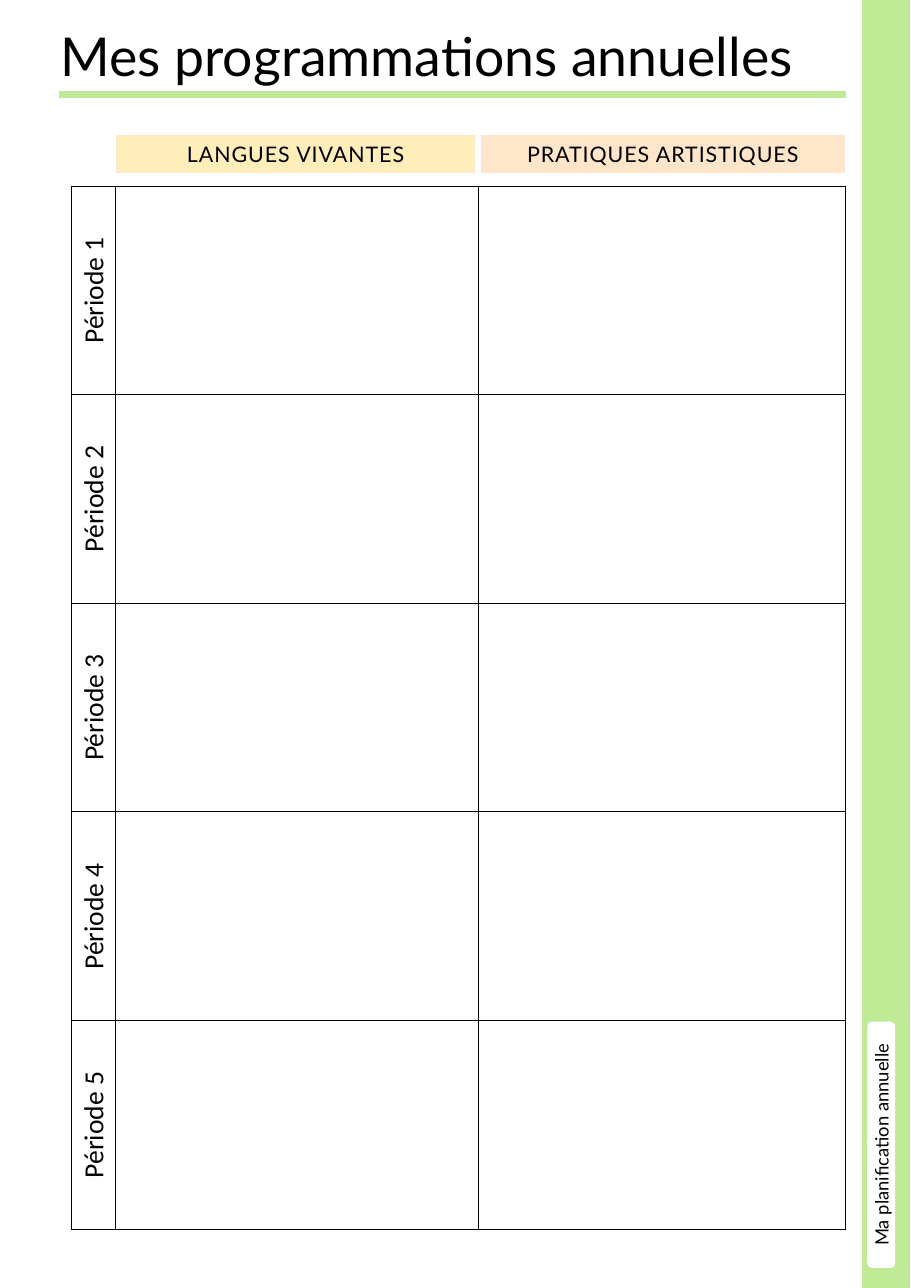
"""Build an A4 yearly planning page with one row per school period."""
from lxml.etree import SubElement
from pptx import Presentation
from pptx.dml.color import RGBColor
from pptx.enum.shapes import MSO_CONNECTOR as Connector, MSO_SHAPE as Shape
from pptx.enum.text import MSO_ANCHOR as Anchor, PP_ALIGN as Align
from pptx.oxml.ns import qn
from pptx.util import Cm, Pt

TITLE = "Mes programmations annuelles"
TAB = "Ma planification annuelle"
PERIODS = [f"Période {number}" for number in range(1, 6)]
SUBJECTS = [
    {"text": "LANGUES VIVANTES", "left": 2.69, "width": 8.26, "fill": "amber", "alpha": 27},
    {"text": "PRATIQUES ARTISTIQUES", "left": 11.1, "width": 8.38, "fill": "peach", "alpha": 100},
]
COLUMNS = [1.02, 8.36, 8.46]
ROW_HEIGHT = 4.81
PAGE_WIDTH, PAGE_HEIGHT = 21.01, 29.69
COLORS = {"green": "BFEA96", "rule": "BEE996", "amber": "FFC000",
          "peach": "FFE5C9", "white": "FFFFFF", "black": "000000"}


def color(name):
    """Return the named colour."""
    return RGBColor.from_string(COLORS[name])


def write(frame, text, size, font="Lato", align=Align.CENTER, anchor=Anchor.MIDDLE, spacing=0):
    """Put one formatted line of text in a text frame."""
    frame.word_wrap = True
    frame.vertical_anchor = anchor
    para = frame.paragraphs[0]
    para.alignment = align
    span = para.add_run()
    span.text = text
    span.font.size = Pt(size)
    span.font.name = font
    span.font.color.rgb = color("black")
    if spacing:
        span.font._element.set("spc", str(round(spacing * 100)))


def add_box(page, kind, place, fill, line, line_width, alpha=100):
    """Add a filled, outlined shape without a shadow."""
    box = page.shapes.add_shape(kind, *map(Cm, place))
    box.shadow.inherit = False
    box.fill.solid()
    box.fill.fore_color.rgb = color(fill)
    box.line.color.rgb = color(line)
    box.line.width = Pt(line_width)
    if alpha < 100:
        tint = box.element.spPr.find(qn("a:solidFill"))[0]
        SubElement(tint, qn("a:alpha"), val=str(alpha * 1000))
    return box


def add_borders(cell, width):
    """Draw all four black borders of a cell."""
    properties = cell._tc.get_or_add_tcPr()
    for side in ("lnL", "lnR", "lnT", "lnB"):
        edge = SubElement(properties, qn(f"a:{side}"), w=str(Pt(width)))
        fill = SubElement(edge, qn("a:solidFill"))
        SubElement(fill, qn("a:srgbClr"), val=COLORS["black"])


def add_title(page):
    """Place the title and the rule under it."""
    title = page.shapes.title
    title.left, title.top, title.width, title.height = map(Cm, (1.14, 0.41, 19.48, 1.75))
    write(title.text_frame, TITLE, 35, align=Align.LEFT, anchor=Anchor.TOP)
    rule = page.shapes.add_connector(Connector.STRAIGHT, *map(Cm, (1.37, 2.18, 19.51, 2.18)))
    rule.line.color.rgb = color("rule")
    rule.line.width = Pt(4.75)
    SubElement(rule.element.spPr, qn("a:effectLst"))


def add_sidebar(page):
    """Add the green side band and its vertical tab."""
    add_box(page, Shape.RECTANGLE, (19.89, 0, 1.09, PAGE_HEIGHT), "green", "green", 1)
    tab = add_box(page, Shape.ROUNDED_RECTANGLE, (20.02, 23.57, 0.61, 5.64), "white", "white", 1)
    frame = tab.text_frame
    frame.margin_left = frame.margin_right = frame.margin_top = frame.margin_bottom = 0
    write(frame, TAB, 12)
    tab.element.txBody.bodyPr.set("vert", "vert270")


def add_planning(page):
    """Add the period table and the subject headings above it."""
    place = (1.65, 4.29, sum(COLUMNS), ROW_HEIGHT * len(PERIODS))
    table = page.shapes.add_table(len(PERIODS), len(COLUMNS), *map(Cm, place)).table
    table.first_row = table.horz_banding = False
    for column, width in zip(table.columns, COLUMNS):
        column.width = Cm(width)
    for row, period in zip(table.rows, PERIODS):
        row.height = Cm(ROW_HEIGHT)
        for cell in row.cells:
            add_borders(cell, 0.75)
            cell.fill.background()
        label = row.cells[0]
        write(label.text_frame, period, 18, font="Calibri")
        label.vertical_anchor = Anchor.MIDDLE
        label._tc.get_or_add_tcPr().set("vert", "vert270")
    for subject in SUBJECTS:
        place = (subject["left"], 3.12, subject["width"], 0.86)
        heading = add_box(page, Shape.RECTANGLE, place, subject["fill"], "peach", 0.75,
                          alpha=subject["alpha"])
        write(heading.text_frame, subject["text"], 14, spacing=0.6)


def main():
    """Assemble and save the page."""
    deck = Presentation()
    deck.slide_width, deck.slide_height = Cm(PAGE_WIDTH), Cm(PAGE_HEIGHT)
    page = deck.slides.add_slide(deck.slide_layouts.get_by_name("Title Only"))
    add_sidebar(page)
    add_title(page)
    add_planning(page)
    deck.save("out.pptx")


if __name__ == "__main__":
    main()
